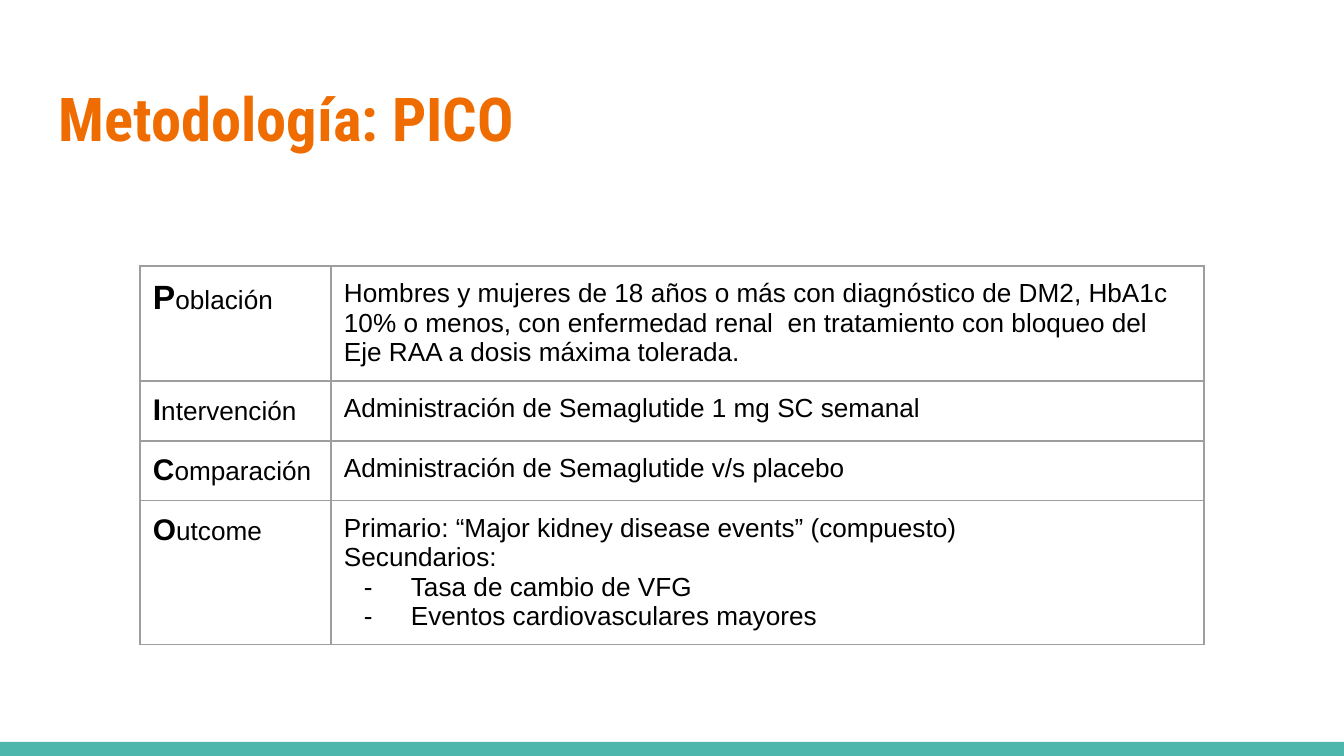
from lxml.etree import SubElement
from pptx import Presentation
from pptx.dml.color import RGBColor
from pptx.enum.shapes import MSO_SHAPE
from pptx.enum.text import MSO_ANCHOR, PP_ALIGN
from pptx.oxml.ns import qn
from pptx.util import Pt

PX = 914400 / 134.4
COLORS = {"title": "EF6C00", "bar": "4DB6AC", "text": "000000", "border": "9E9E9E"}
MARGIN = 13
COL_WIDTHS = [191, 873]
# Initial size, label, row height, (paragraph, is bullet)
ROWS = [
    (18, "Población", 115, [
        ("Hombres y mujeres de 18 años o más con diagnóstico de DM2, HbA1c 10% o menos, "
         "con enfermedad renal  en tratamiento con bloqueo del Eje RAA a dosis máxima tolerada.", False)]),
    (16, "Intervención", 60, [("Administración de Semaglutide 1 mg SC semanal", False)]),
    (16, "Comparación", 60, [("Administración de Semaglutide v/s placebo", False)]),
    (16, "Outcome", 144, [
        ("Primario: “Major kidney disease events” (compuesto)", False),
        ("Secundarios:", False),
        ("Tasa de cambio de VFG", True),
        ("Eventos cardiovasculares mayores", True)]),
]


def px(n):
    return round(n * PX)


def style_run(r, size, color, bold=False, font="Arial"):
    r.font.name = font
    r.font.size = Pt(size)
    r.font.bold = bold
    r.font.color.rgb = RGBColor.from_string(COLORS[color])


prs = Presentation()
prs.slide_width, prs.slide_height = px(1344), px(756)
s = prs.slides.add_slide(prs.slide_layouts[5])

# Bottom bar
bar = s.shapes.add_shape(MSO_SHAPE.RECTANGLE, 0, px(742), px(1344), px(14))
bar.shadow.inherit = False
bar.fill.solid()
bar.fill.fore_color.rgb = RGBColor.from_string(COLORS["bar"])
bar.line.fill.background()

# Title
title = s.shapes.title
title.left, title.top, title.width, title.height = px(46), px(66), px(1253), px(103)
tf = title.text_frame
tf.text = "Metodología: PICO"
tf.margin_left = tf.margin_right = tf.margin_top = tf.margin_bottom = px(MARGIN)
tf.vertical_anchor = MSO_ANCHOR.MIDDLE
p = tf.paragraphs[0]
p.alignment = PP_ALIGN.LEFT
style_run(p.runs[0], 32.4, "title", True, "Roboto Condensed")

# PICO table
height = sum(row[2] for row in ROWS)
table = s.shapes.add_table(len(ROWS), 2, px(140), px(266), px(sum(COL_WIDTHS)), px(height)).table
table.first_row = table.horz_banding = False
for col, width in zip(table.columns, COL_WIDTHS):
    col.width = px(width)

for row, (size, label, row_height, lines) in zip(table.rows, ROWS):
    row.height = px(row_height)
    label_cell, text_cell = row.cells

    p = label_cell.text_frame.paragraphs[0]
    for text, run_size, bold in ((label[0], size, True), (label[1:], 14, False)):
        r = p.add_run()
        r.text = text
        style_run(r, run_size, "text", bold)

    tf = text_cell.text_frame
    tf.text = "\n".join(text for text, _ in lines)
    for p, (_, bullet) in zip(tf.paragraphs, lines):
        style_run(p.runs[0], 14, "text")
        if bullet:
            pPr = p._p.get_or_add_pPr()
            pPr.set("marL", str(px(67)))
            pPr.set("indent", str(px(-47)))
            clr = SubElement(pPr, qn("a:buClr"))
            SubElement(clr, qn("a:srgbClr"), val=COLORS["text"])
            SubElement(pPr, qn("a:buFont"), typeface="Arial")
            SubElement(pPr, qn("a:buChar"), char="-")

    for cell in row.cells:
        cell.margin_left = cell.margin_right = cell.margin_top = cell.margin_bottom = px(MARGIN)
        tcPr = cell._tc.get_or_add_tcPr()
        for side in ("lnL", "lnR", "lnT", "lnB"):
            ln = SubElement(tcPr, qn(f"a:{side}"), w=str(Pt(0.75)))
            fill = SubElement(ln, qn("a:solidFill"))
            SubElement(fill, qn("a:srgbClr"), val=COLORS["border"])
        cell.fill.background()

prs.save("out.pptx")
